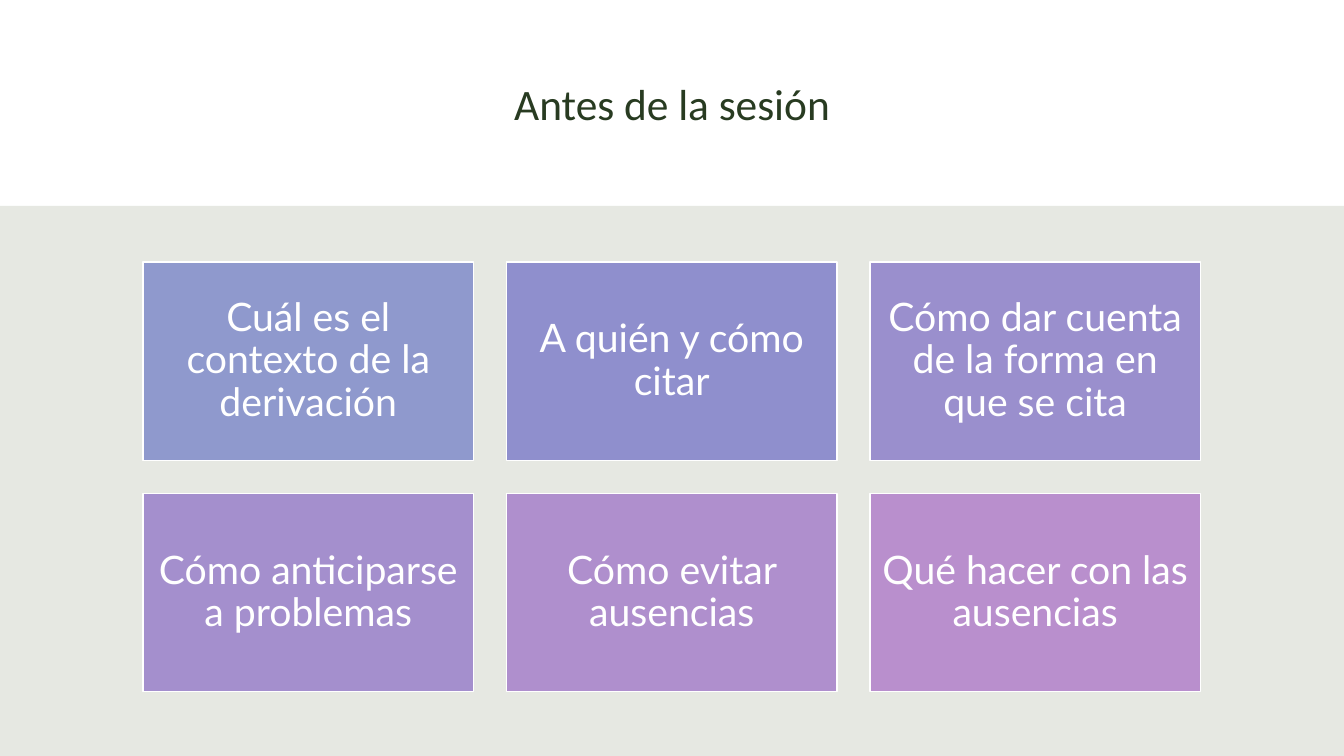
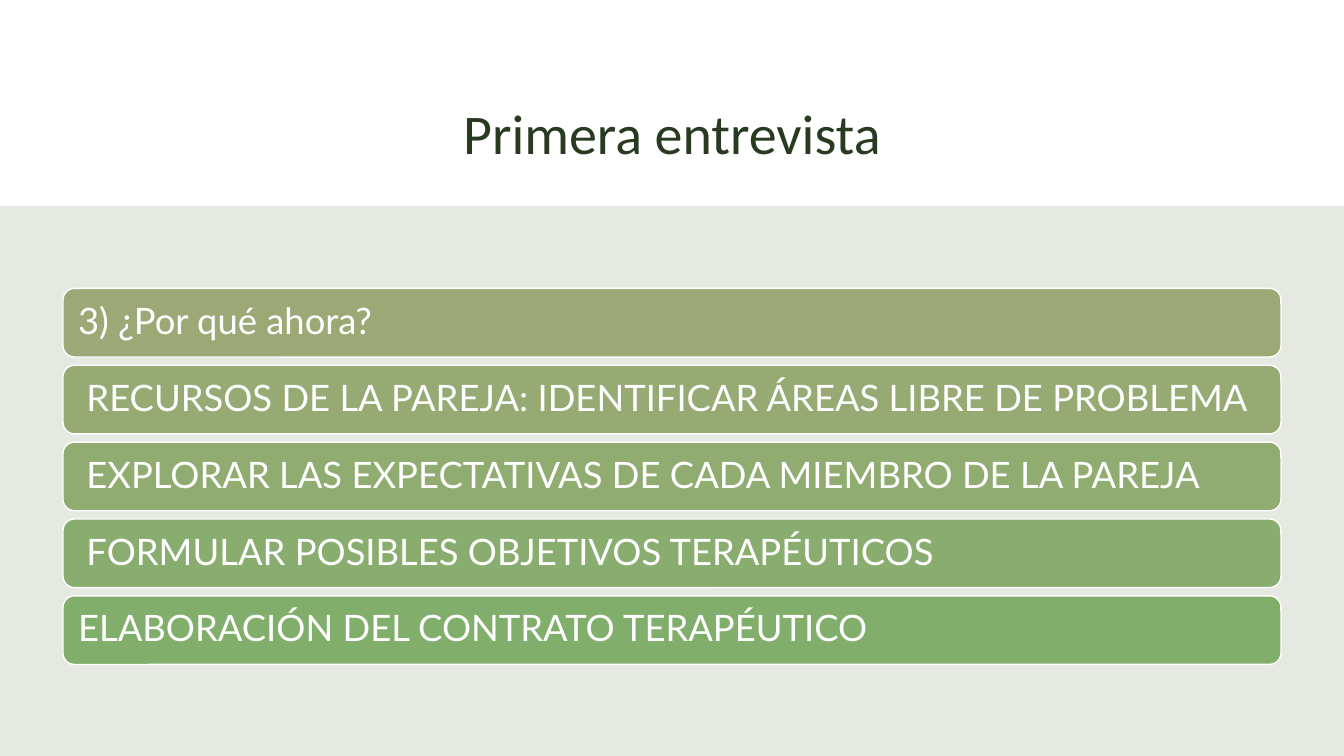
from pptx import Presentation
from pptx.dml.color import RGBColor
from pptx.enum.shapes import MSO_SHAPE
from pptx.enum.text import MSO_ANCHOR, PP_ALIGN
from pptx.util import Pt

WHITE = RGBColor(0xFF, 0xFF, 0xFF)
GREEN = RGBColor(0x28, 0x3B, 0x21)
SAGE = RGBColor(0xE6, 0xE8, 0xE2)

WIDTH, HEIGHT = 960, 540
BAND_TOP = 147
INSET = 8.4

# text, fill
CARDS = [
    ("Cuál es el contexto de la derivación", RGBColor(0x8F, 0x99, 0xCD)),
    ("A quién y cómo citar", RGBColor(0x8F, 0x8F, 0xCD)),
    ("Cómo dar cuenta de la forma en que se cita", RGBColor(0x9A, 0x8F, 0xCD)),
    ("Cómo anticiparse a problemas", RGBColor(0xA4, 0x8F, 0xCD)),
    ("Cómo evitar ausencias", RGBColor(0xAF, 0x8F, 0xCD)),
    ("Qué hacer con las ausencias", RGBColor(0xB9, 0x8F, 0xCD)),
]

# text, fill, extra left indent
STEPS = [
    ("3) ¿Por qué ahora?", RGBColor(0x9C, 0xA9, 0x76), 0),
    ("RECURSOS DE LA PAREJA: IDENTIFICAR ÁREAS LIBRE DE PROBLEMA",
     RGBColor(0x97, 0xAA, 0x73), 6),
    ("EXPLORAR LAS EXPECTATIVAS DE CADA MIEMBRO DE LA PAREJA",
     RGBColor(0x90, 0xAC, 0x71), 6),
    ("FORMULAR POSIBLES OBJETIVOS TERAPÉUTICOS",
     RGBColor(0x89, 0xAD, 0x6E), 6),
    ("ELABORACIÓN DEL CONTRATO TERAPÉUTICO", RGBColor(0x81, 0xAF, 0x6B), 0),
]


def write(frame, text, font, size, color, align, anchor, spacing=0.9):
    frame.word_wrap = True
    frame.vertical_anchor = anchor
    para = frame.paragraphs[0]
    para.alignment = align
    para.line_spacing = spacing
    run = para.add_run()
    run.text = text
    run.font.name = font
    run.font.size = Pt(size)
    run.font.color.rgb = color


def add_block(slide, kind, x, y, w, h, fill):
    shape = slide.shapes.add_shape(kind, Pt(x), Pt(y), Pt(w), Pt(h))
    shape.shadow.inherit = False
    shape.fill.solid()
    shape.fill.fore_color.rgb = fill
    shape.line.fill.background()
    return shape


def add_label(slide, kind, x, y, w, h, fill, text, size, align, indent=0):
    """Add a white-edged block with white text."""
    shape = add_block(slide, kind, x, y, w, h, fill)
    shape.line.color.rgb = WHITE
    shape.line.width = Pt(1)
    frame = shape.text_frame
    frame.margin_left = Pt(INSET + indent)
    frame.margin_right = frame.margin_top = frame.margin_bottom = Pt(INSET)
    write(frame, text, "Lato", size, WHITE, align, MSO_ANCHOR.MIDDLE)


def add_page(deck, text, size, anchor, spacing):
    """Add a slide with its title and the lower band."""
    slide = deck.slides.add_slide(deck.slide_layouts[5])
    title = slide.shapes.title
    title.left, title.top = Pt(112), Pt(55.4)
    title.width, title.height = Pt(736), Pt(78.5)
    write(title.text_frame, text, "Calibri", size, GREEN,
          PP_ALIGN.CENTER, anchor, spacing)
    add_block(slide, MSO_SHAPE.RECTANGLE, 0, BAND_TOP,
              WIDTH, HEIGHT - BAND_TOP, SAGE)
    return slide


def add_cards(slide):
    cols, left, top, wide = 3, 102.2, 187.2, 236
    high, gap = wide * 0.6, wide * 0.1
    for i, (text, fill) in enumerate(CARDS):
        row, col = divmod(i, cols)
        add_label(slide, MSO_SHAPE.RECTANGLE,
                  left + col * (wide + gap), top + row * (high + gap),
                  wide, high, fill, text, 28, PP_ALIGN.CENTER)


def add_steps(slide):
    left, top, high, gap = 45, 206, 49, 5.9
    for i, (text, fill, indent) in enumerate(STEPS):
        add_label(slide, MSO_SHAPE.ROUNDED_RECTANGLE,
                  left, top + i * (high + gap), WIDTH - 2 * left, high,
                  fill, text, 26, PP_ALIGN.LEFT, indent)


def main():
    deck = Presentation()
    deck.slide_width, deck.slide_height = Pt(WIDTH), Pt(HEIGHT)
    add_cards(add_page(deck, "Antes de la sesión", 31, MSO_ANCHOR.TOP, 0.9))
    add_steps(add_page(deck, "Primera entrevista", 40, MSO_ANCHOR.MIDDLE, 1.0))
    deck.save("out.pptx")


if __name__ == "__main__":
    main()
